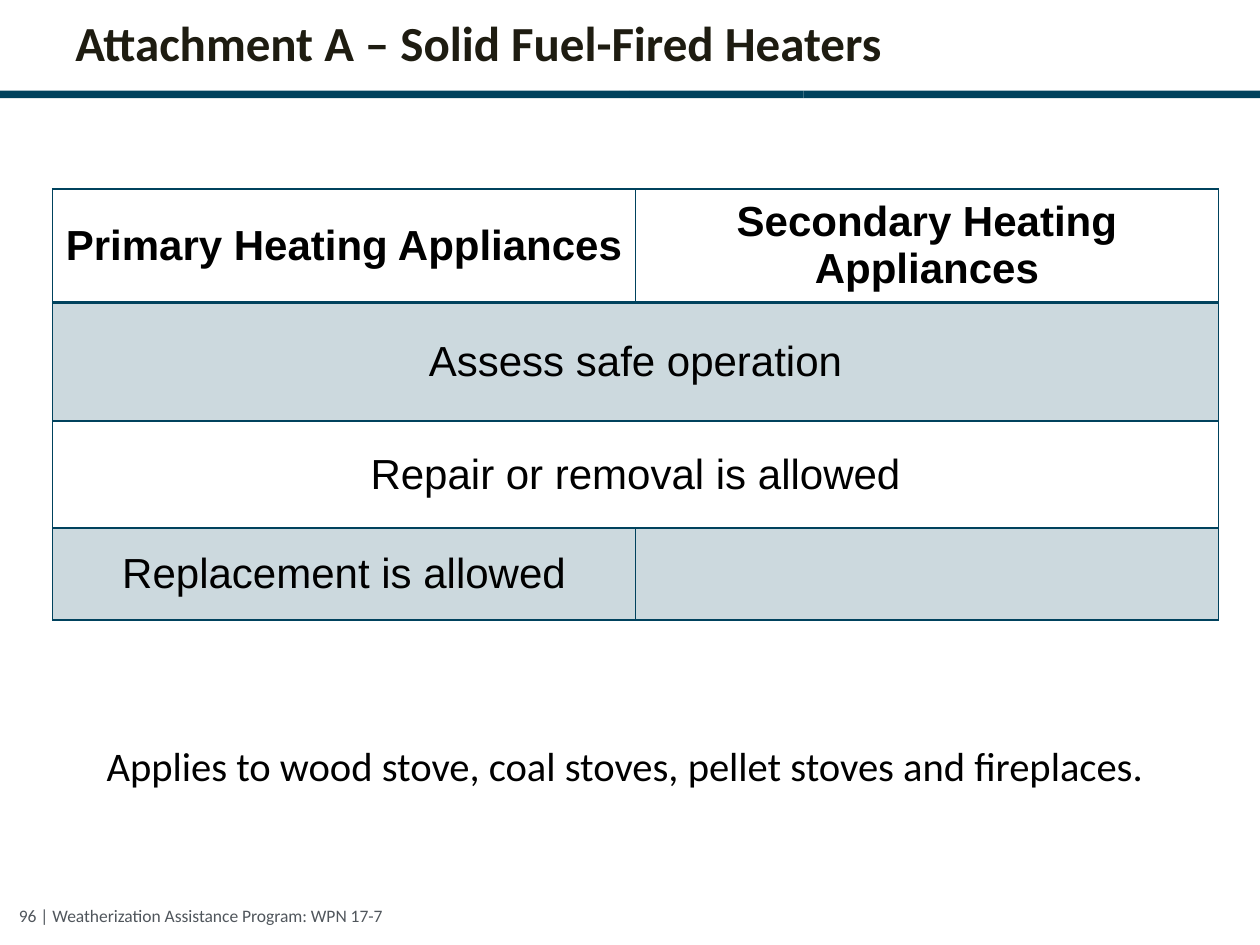
from lxml.etree import SubElement
from pptx import Presentation
from pptx.dml.color import RGBColor
from pptx.enum.shapes import MSO_SHAPE
from pptx.enum.text import MSO_ANCHOR, PP_ALIGN
from pptx.oxml.ns import qn
from pptx.util import Cm, Pt

NAVY = "00425D"
BLACK = "000000"
ROW_HEIGHTS = (1.9, 2.39, 2.16, 1.85)
COLUMN_WIDTH = 11.75
ROWS = (
    ("Primary Heating Appliances", "Secondary Heating Appliances"),
    ("Assess safe operation",),
    ("Repair or removal is allowed",),
    ("Replacement is allowed", ""),
)


def color(value):
    return RGBColor.from_string(value)


def write_text(frame, text, size=24, font="Arial", fill=BLACK, bold=False,
               align=PP_ALIGN.LEFT, spacing=None):
    paragraph = frame.paragraphs[0]
    paragraph.alignment = align
    if spacing is not None:
        paragraph.line_spacing = spacing
    run = paragraph.add_run()
    run.text = text
    run.font.size = Pt(size)
    run.font.name = font
    run.font.bold = bold
    run.font.color.rgb = color(fill)


def add_text(slide, text, left, top, width, height, wrap=True,
             anchor=MSO_ANCHOR.TOP, **text_format):
    box = slide.shapes.add_textbox(Cm(left), Cm(top), Cm(width), Cm(height))
    box.text_frame.word_wrap = wrap
    box.text_frame.vertical_anchor = anchor
    write_text(box.text_frame, text, font="Calibri", **text_format)


def add_bar(slide, left, width):
    bar = slide.shapes.add_shape(
        MSO_SHAPE.RECTANGLE, Cm(left), Cm(1.83), Cm(width), Cm(0.15))
    bar.shadow.inherit = False
    bar.fill.solid()
    bar.fill.fore_color.rgb = color(NAVY)
    bar.line.fill.background()


def set_borders(cell, bottom):
    properties = cell._tc.get_or_add_tcPr()
    widths = {"a:lnL": 1, "a:lnR": 1, "a:lnT": 1, "a:lnB": bottom}
    for index, (side, width) in enumerate(widths.items()):
        line = properties.makeelement(qn(side), {"w": str(Pt(width))})
        fill = SubElement(line, qn("a:solidFill"))
        SubElement(fill, qn("a:srgbClr"), val=NAVY)
        properties.insert(index, line)


def fill_cell(cell, tinted):
    if not tinted:
        cell.fill.background()
        return
    cell.fill.solid()
    cell.fill.fore_color.rgb = color(NAVY)
    tint = cell._tc.tcPr.find(qn("a:solidFill")).find(qn("a:srgbClr"))
    SubElement(tint, qn("a:alpha"), val="20000")


def add_heater_table(slide):
    table = slide.shapes.add_table(
        len(ROWS), 2, Cm(1.06), Cm(3.81),
        Cm(2 * COLUMN_WIDTH), Cm(sum(ROW_HEIGHTS))).table
    table.first_row = False
    table.horz_banding = False
    for column in table.columns:
        column.width = Cm(COLUMN_WIDTH)
    for index, (texts, height) in enumerate(zip(ROWS, ROW_HEIGHTS)):
        table.rows[index].height = Cm(height)
        cells = [table.cell(index, column) for column in range(2)]
        for cell in cells:
            fill_cell(cell, tinted=index % 2 == 1)
            set_borders(cell, bottom=2 if index == 0 else 1)
        if len(texts) == 1:
            cells[0].merge(cells[1])
        for cell, text in zip(cells, texts):
            cell.vertical_anchor = MSO_ANCHOR.MIDDLE
            if text:
                write_text(cell.text_frame, text, bold=index == 0,
                           align=PP_ALIGN.CENTER)


def main():
    presentation = Presentation()
    presentation.slide_width = Cm(25.4)
    presentation.slide_height = Cm(19.05)
    slide = presentation.slides.add_slide(presentation.slide_layouts[6])

    left = 0
    for width in (12.7, 3.5, 9.2):
        add_bar(slide, left, width)
        left += width
    add_text(slide, "96 | Weatherization Assistance Program: WPN 17-7",
             0.13, 18.21, 15.75, 0.61, size=10, fill="50565C", spacing=0.8)
    add_text(slide, "Attachment A – Solid Fuel-Fired Heaters",
             1.27, 0, 22.86, 1.9, anchor=MSO_ANCHOR.MIDDLE,
             size=28, fill="1E1C11", bold=True, spacing=Pt(28))
    add_heater_table(slide)
    add_text(slide,
             "Applies to wood stove, coal stoves, pellet stoves and fireplaces.",
             1.9, 14.81, 22.5, 2.51, wrap=False, size=23.2)
    presentation.save("out.pptx")


if __name__ == "__main__":
    main()
